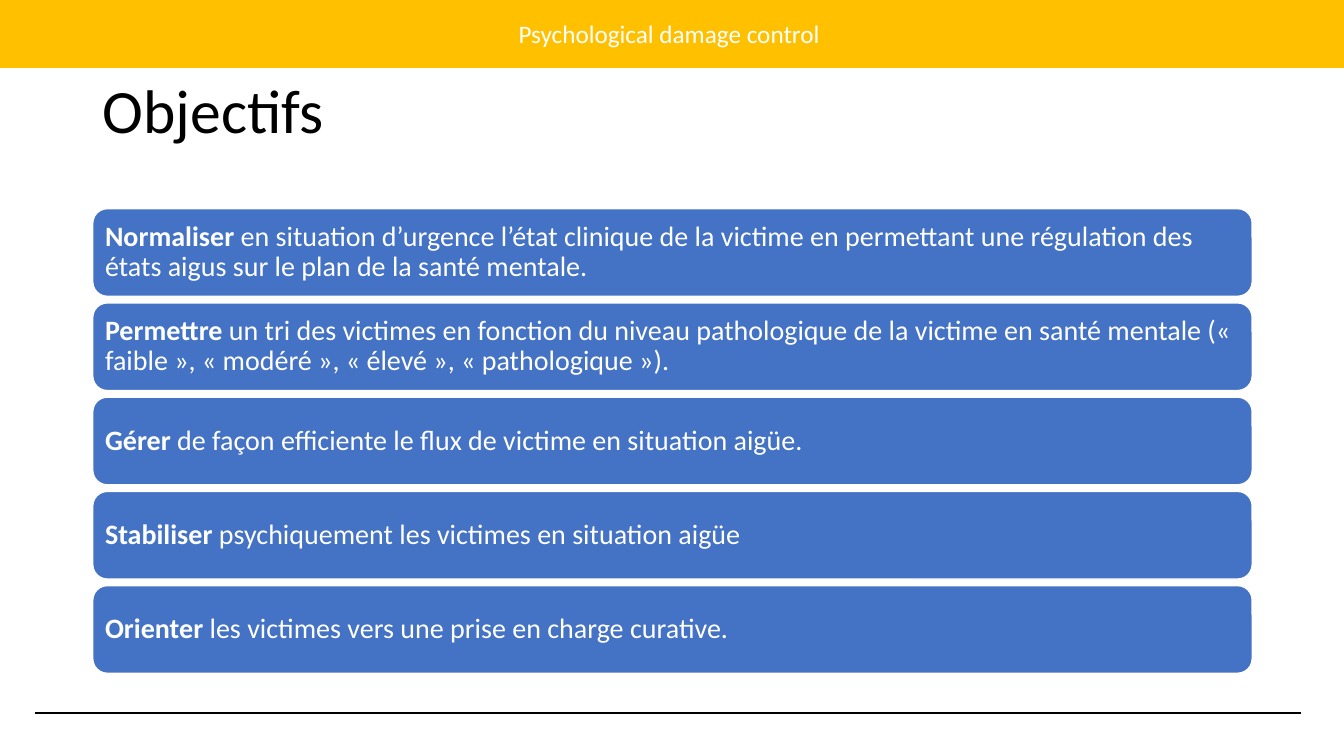
"""Build the slide listing the objectives of psychological damage control."""
from dataclasses import dataclass

from lxml.etree import SubElement
from pptx import Presentation
from pptx.dml.color import RGBColor
from pptx.enum.shapes import MSO_CONNECTOR as Connector, MSO_SHAPE as Preset
from pptx.enum.text import MSO_ANCHOR as Anchor, PP_ALIGN as Align
from pptx.oxml.ns import qn
from pptx.shapes.autoshape import Shape
from pptx.slide import Slide
from pptx.text.text import TextFrame
from pptx.util import Inches, Pt

AMBER = RGBColor(0xFF, 0xC0, 0x00)
BLUE = RGBColor(0x44, 0x72, 0xC4)
BLACK = RGBColor(0, 0, 0)
WHITE = RGBColor(0xFF, 0xFF, 0xFF)

SLIDE_WIDTH, SLIDE_HEIGHT = 13.33, 7.5
LEFT, WIDTH = 0.92, 11.5
FIRST_TOP, CARD_HEIGHT, CARD_GAP = 2.07, 0.87, 0.065
CARD_INSET = Inches(0.08)

FRAME_FORMAT = {"word_wrap": True, "vertical_anchor": Anchor.MIDDLE}
CARD_FORMAT = {
    "margin_left": CARD_INSET,
    "margin_right": CARD_INSET,
    "margin_top": CARD_INSET,
    "margin_bottom": CARD_INSET,
}


@dataclass(frozen=True)
class Box:
    left: float
    top: float
    width: float
    height: float

    def lengths(self) -> list[Inches]:
        return [Inches(n) for n in (self.left, self.top, self.width, self.height)]


@dataclass(frozen=True)
class Objective:
    verb: str
    rest: str


OBJECTIVES = [
    Objective("Normaliser", " en situation d’urgence l’état clinique de la victime en permettant "
              "une régulation des états aigus sur le plan de la santé mentale."),
    Objective("Permettre", " un tri des victimes en fonction du niveau pathologique de la victime "
              "en santé mentale (« faible », « modéré », « élevé », « pathologique »)."),
    Objective("Gérer", " de façon efficiente le flux de victime en situation aigüe."),
    Objective("Stabiliser", " psychiquement les victimes en situation aigüe"),
    Objective("Orienter", " les victimes vers une prise en charge curative."),
]


def apply(target: object, values: dict[str, object]) -> None:
    for name, value in values.items():
        setattr(target, name, value)


def write(frame: TextFrame, runs: list[tuple[str, bool]], size: int, color: RGBColor,
          paragraph_format: dict[str, object]) -> None:
    apply(frame, FRAME_FORMAT)
    paragraph = frame.paragraphs[0]
    apply(paragraph, paragraph_format)
    for text, bold in runs:
        run = paragraph.add_run()
        run.text = text
        apply(run.font, {"name": "Calibri", "size": Pt(size), "bold": bold})
        run.font.color.rgb = color


def add_panel(slide: Slide, preset: Preset, box: Box, fill: RGBColor, line: RGBColor) -> Shape:
    panel = slide.shapes.add_shape(preset, *box.lengths())
    panel.shadow.inherit = False
    panel.fill.solid()
    panel.fill.fore_color.rgb = fill
    panel.line.color.rgb = line
    panel.line.width = Pt(1)
    return panel


def add_header(slide: Slide) -> None:
    header = add_panel(slide, Preset.RECTANGLE, Box(0, 0, SLIDE_WIDTH, 0.67), AMBER, AMBER)
    write(header.text_frame, [("Psychological damage control ", False)], 18, WHITE,
          {"alignment": Align.CENTER})


def add_footer_rule(slide: Slide) -> None:
    rule = slide.shapes.add_connector(
        Connector.STRAIGHT, Inches(0.35), Inches(7.07), Inches(12.9), Inches(7.07))
    rule.line.color.rgb = BLACK
    rule.line.width = Pt(1.5)
    SubElement(rule._element.spPr, qn("a:effectLst"))


def add_title(slide: Slide) -> None:
    title = slide.shapes.add_textbox(*Box(LEFT, 0.4, WIDTH, 1.45).lengths())
    write(title.text_frame, [("Objectifs", False)], 44, BLACK,
          {"alignment": Align.LEFT, "line_spacing": 0.9})


def add_objective(slide: Slide, row: int, objective: Objective) -> None:
    top = FIRST_TOP + row * (CARD_HEIGHT + CARD_GAP)
    card = add_panel(slide, Preset.ROUNDED_RECTANGLE, Box(LEFT, top, WIDTH, CARD_HEIGHT),
                     BLUE, WHITE)
    apply(card.text_frame, CARD_FORMAT)
    write(card.text_frame, [(objective.verb, True), (objective.rest, False)], 20, WHITE,
          {"alignment": Align.LEFT, "line_spacing": 0.9})


def main() -> None:
    deck = Presentation()
    apply(deck, {"slide_width": Inches(SLIDE_WIDTH), "slide_height": Inches(SLIDE_HEIGHT)})
    slide = deck.slides.add_slide(deck.slide_layouts[6])
    add_header(slide)
    add_footer_rule(slide)
    add_title(slide)
    for row, objective in enumerate(OBJECTIVES):
        add_objective(slide, row, objective)
    deck.save("out.pptx")


if __name__ == "__main__":
    main()
